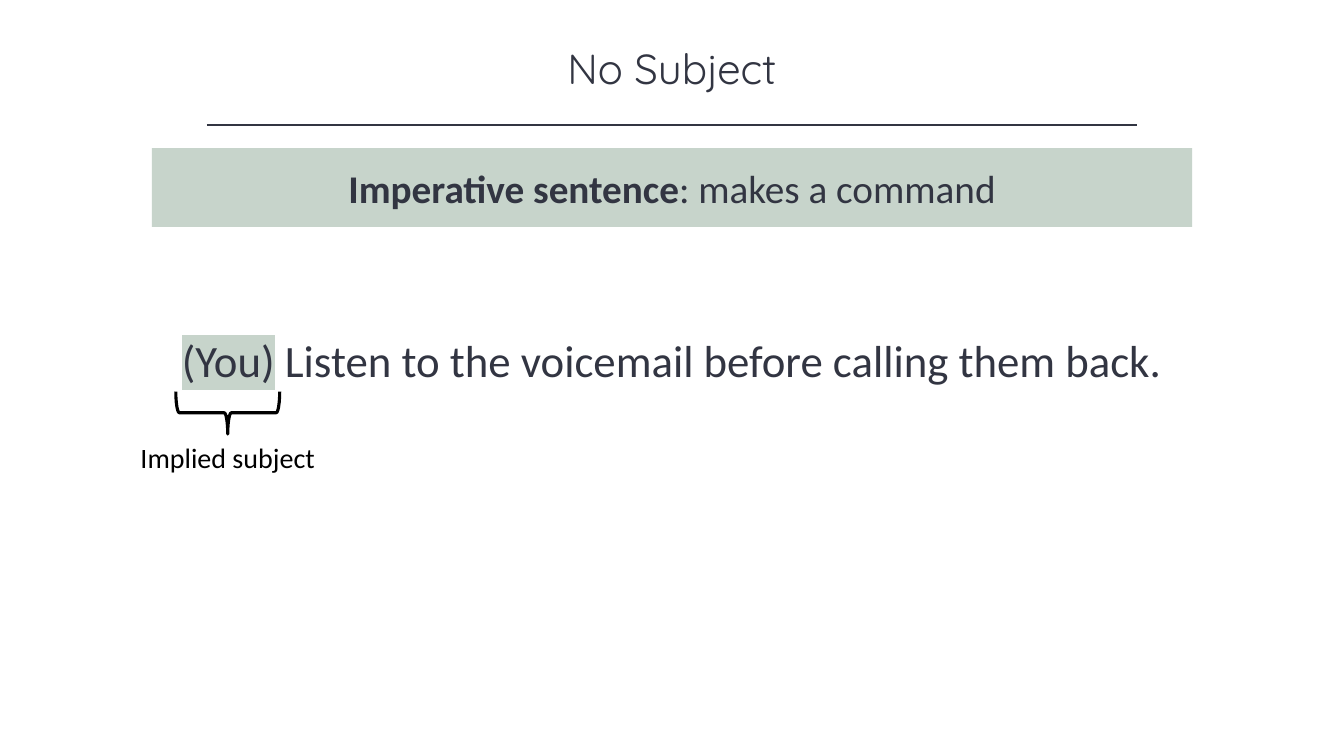
from lxml import etree
from pptx import Presentation
from pptx.dml.color import RGBColor
from pptx.enum.shapes import MSO_CONNECTOR, MSO_SHAPE
from pptx.enum.text import MSO_ANCHOR, MSO_AUTO_SIZE, PP_ALIGN
from pptx.oxml.ns import qn
from pptx.util import Inches, Pt

INK = RGBColor(0x32, 0x35, 0x42)
SAGE = RGBColor(0xC7, 0xD4, 0xCB)
BLACK = RGBColor(0, 0, 0)
STRAIGHT = MSO_CONNECTOR.STRAIGHT
RECTANGLE, LEFT_BRACE = MSO_SHAPE.RECTANGLE, MSO_SHAPE.LEFT_BRACE
TOP, MIDDLE = MSO_ANCHOR.TOP, MSO_ANCHOR.MIDDLE
CENTER = PP_ALIGN.CENTER
NO_AUTOFIT = MSO_AUTO_SIZE.NONE

TITLE_ONLY = 5
MID_SLIDE = 50  # percent of slide width
MID_SUBJECT = 16.95

deck = Presentation()
deck.slide_width, deck.slide_height = Inches(13.33), Inches(7.5)
slide = deck.slides.add_slide(deck.slide_layouts[TITLE_ONLY])
shapes = slide.shapes


def centred(middle, top, width, height):
    """Turn percentages of the slide into left, top, width and height."""
    across, down = deck.slide_width / 100, deck.slide_height / 100
    return (round((middle - width / 2) * across), round(top * down),
            round(width * across), round(height * down))


def write(shape, runs, size, font="Calibri", color=INK, anchor=TOP, wrap=True):
    """Fill a shape with one centred paragraph and return its runs."""
    frame = shape.text_frame
    frame.auto_size = NO_AUTOFIT
    frame.word_wrap = wrap
    frame.vertical_anchor = anchor
    paragraph = frame.paragraphs[0]
    paragraph.alignment = CENTER
    for text, bold in runs:
        run = paragraph.add_run()
        run.text = text
        run.font.size = Pt(size)
        run.font.bold = bold
        run.font.color.rgb = color
        run.font.name = font
    return paragraph.runs


# Heading and its rule
title = shapes.title
title.left, title.top, title.width, title.height = centred(MID_SLIDE, 4.93, 75, 8.13)
write(title, [("No Subject", False)], 30, font="Quicksand")

left, top, width, _ = centred(MID_SLIDE, 16.53, 69.2, 0)
rule = shapes.add_connector(STRAIGHT, left, top, left + width, top)
rule.line.color.rgb = INK
rule.line.width = Pt(1)
etree.SubElement(rule._element.spPr, qn("a:effectLst"))

# Definition
definition = shapes.add_shape(RECTANGLE, *centred(MID_SLIDE, 19.6, 77.4, 10.4))
definition.shadow.inherit = False
definition.fill.solid()
definition.fill.fore_color.rgb = SAGE
definition.line.fill.background()
write(definition, [("Imperative sentence", True), (": makes a command", False)],
      28, anchor=MIDDLE)

# Example with the implied subject highlighted
example = shapes.add_textbox(*centred(MID_SLIDE, 43.33, 75.5, 8.53))
subject, _ = write(
    example,
    [("(You)", False), (" Listen to the voicemail before calling them back.", False)],
    32, anchor=MIDDLE)
example.text_frame.paragraphs[0].space_after = Pt(18)
highlight = etree.Element(qn("a:highlight"))
etree.SubElement(highlight, qn("a:srgbClr"), val=str(SAGE))
subject._r.rPr.find(qn("a:latin")).addprevious(highlight)

# Brace and label under the subject
brace = shapes.add_shape(LEFT_BRACE, *centred(MID_SUBJECT, 47.73, 3.15, 13.73))
brace.rotation = 270
brace.shadow.inherit = False
brace.fill.background()
brace.line.color.rgb = BLACK
brace.line.width = Pt(2.25)

label = shapes.add_textbox(*centred(MID_SUBJECT, 57.6, 14.55, 5.87))
write(label, [("Implied subject", False)], 20, color=BLACK, wrap=False)

deck.save("out.pptx")
